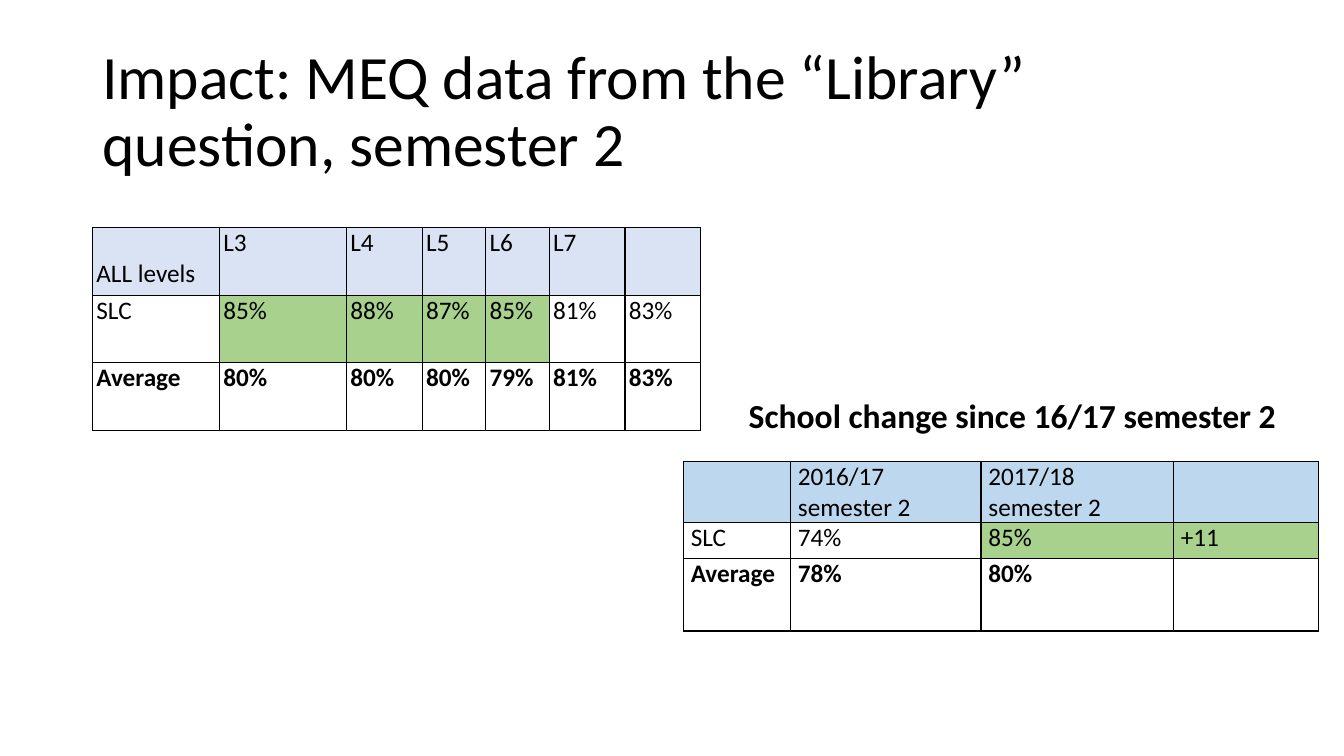
from dataclasses import dataclass

from lxml.etree import SubElement
from pptx import Presentation
from pptx.dml.color import RGBColor
from pptx.enum.text import MSO_ANCHOR
from pptx.oxml.ns import qn
from pptx.util import Cm, Pt


@dataclass(frozen=True)
class Theme:
    font: str = "Calibri"
    ink: str = "000000"
    paper: str = "FFFFFF"
    level_header: str = "DAE3F3"
    year_header: str = "BDD7EE"
    above_average: str = "A9D18E"
    title_size: int = 44
    heading_size: int = 24
    body_size: int = 18
    border_width: int = 1


def write(frame, text, *, font, size, color, bold=False, line_spacing=None):
    paragraph = frame.paragraphs[0]
    paragraph.line_spacing = line_spacing
    paragraph.font.size = Pt(size)
    if not text:
        return
    run = paragraph.add_run()
    run.text = text
    run.font.name = font
    run.font.size = Pt(size)
    run.font.bold = bold
    run.font.color.rgb = RGBColor.from_string(color)


class SlideBuilder:
    def __init__(self, slide, theme):
        self.slide = slide
        self.theme = theme

    def text(self, text, left, top, width, height, *, size, anchor, wrap=True, **style):
        box = self.slide.shapes.add_textbox(Cm(left), Cm(top), Cm(width), Cm(height))
        frame = box.text_frame
        frame.word_wrap = wrap
        frame.vertical_anchor = anchor
        write(frame, text, font=self.theme.font, size=size, color=self.theme.ink, **style)

    def table(self, rows, left, top, widths, heights, *, header_fill, highlights, inset):
        frame = self.slide.shapes.add_table(
            len(rows), len(widths), Cm(left), Cm(top), Cm(sum(widths)), Cm(sum(heights))
        )
        table = frame.table
        table.first_row = False
        table.horz_banding = False
        for column, width in zip(table.columns, widths):
            column.width = Cm(width)
        for row, height in zip(table.rows, heights):
            row.height = Cm(height)
        for r, values in enumerate(rows):
            for c, value in enumerate(values):
                fill = self.theme.paper
                if r == 0:
                    fill = header_fill
                elif (r, c) in highlights:
                    fill = self.theme.above_average
                self.cell(table.cell(r, c), value, fill, inset, bold=r == len(rows) - 1)
        return table

    def cell(self, cell, value, fill, inset, bold):
        cell.margin_left = cell.margin_right = Cm(inset)
        cell.margin_top = cell.margin_bottom = 0
        self.borders(cell)
        cell.fill.solid()
        cell.fill.fore_color.rgb = RGBColor.from_string(fill)
        write(
            cell.text_frame, value, font=self.theme.font,
            size=self.theme.body_size, color=self.theme.ink, bold=bold,
        )

    def borders(self, cell):
        properties = cell._tc.get_or_add_tcPr()
        for side in ("a:lnL", "a:lnR", "a:lnT", "a:lnB"):
            line = SubElement(properties, qn(side), w=str(Pt(self.theme.border_width)))
            solid = SubElement(line, qn("a:solidFill"))
            SubElement(solid, qn("a:srgbClr"), val=self.theme.ink)


def main():
    presentation = Presentation()
    presentation.slide_width = Cm(33.87)
    presentation.slide_height = Cm(19.05)
    theme = Theme()
    builder = SlideBuilder(presentation.slides.add_slide(presentation.slide_layouts[6]), theme)

    builder.text(
        "Impact: MEQ data from the “Library” question, semester 2",
        2.33, 1.01, 29.21, 3.68,
        size=theme.title_size, anchor=MSO_ANCHOR.MIDDLE, line_spacing=0.9,
    )

    levels = builder.table(
        [
            ["ALL levels", "L3", "L4", "L5", "L6", "L7", ""],
            ["SLC", "85%", "88%", "87%", "85%", "81%", "83%"],
            ["Average", "80%", "80%", "80%", "79%", "81%", "83%"],
        ],
        2.33, 5.74, [3.2, 3.2, 1.91, 1.6, 1.6, 1.91, 1.91], [1.7] * 3,
        header_fill=theme.level_header,
        highlights={(1, c) for c in range(1, 5)},
        inset=0.1,
    )
    all_levels = levels.cell(0, 0)
    all_levels.vertical_anchor = MSO_ANCHOR.BOTTOM
    all_levels.margin_bottom = Cm(0.15)

    builder.table(
        [
            ["", "2016/17 semester 2", "2017/18 semester 2", ""],
            ["SLC", "74%", "85%", "+11"],
            ["Average", "78%", "80%", ""],
        ],
        17.22, 11.63, [2.7, 4.8, 4.85, 3.66], [1.53, 0.92, 1.82],
        header_fill=theme.year_header,
        highlights={(1, 2), (1, 3)},
        inset=0.19,
    )

    builder.text(
        "School change since 16/17 semester 2",
        18.62, 9.83, 13.92, 2.82,
        size=theme.heading_size, anchor=MSO_ANCHOR.TOP, wrap=False, bold=True,
    )

    presentation.save("out.pptx")


if __name__ == "__main__":
    main()
